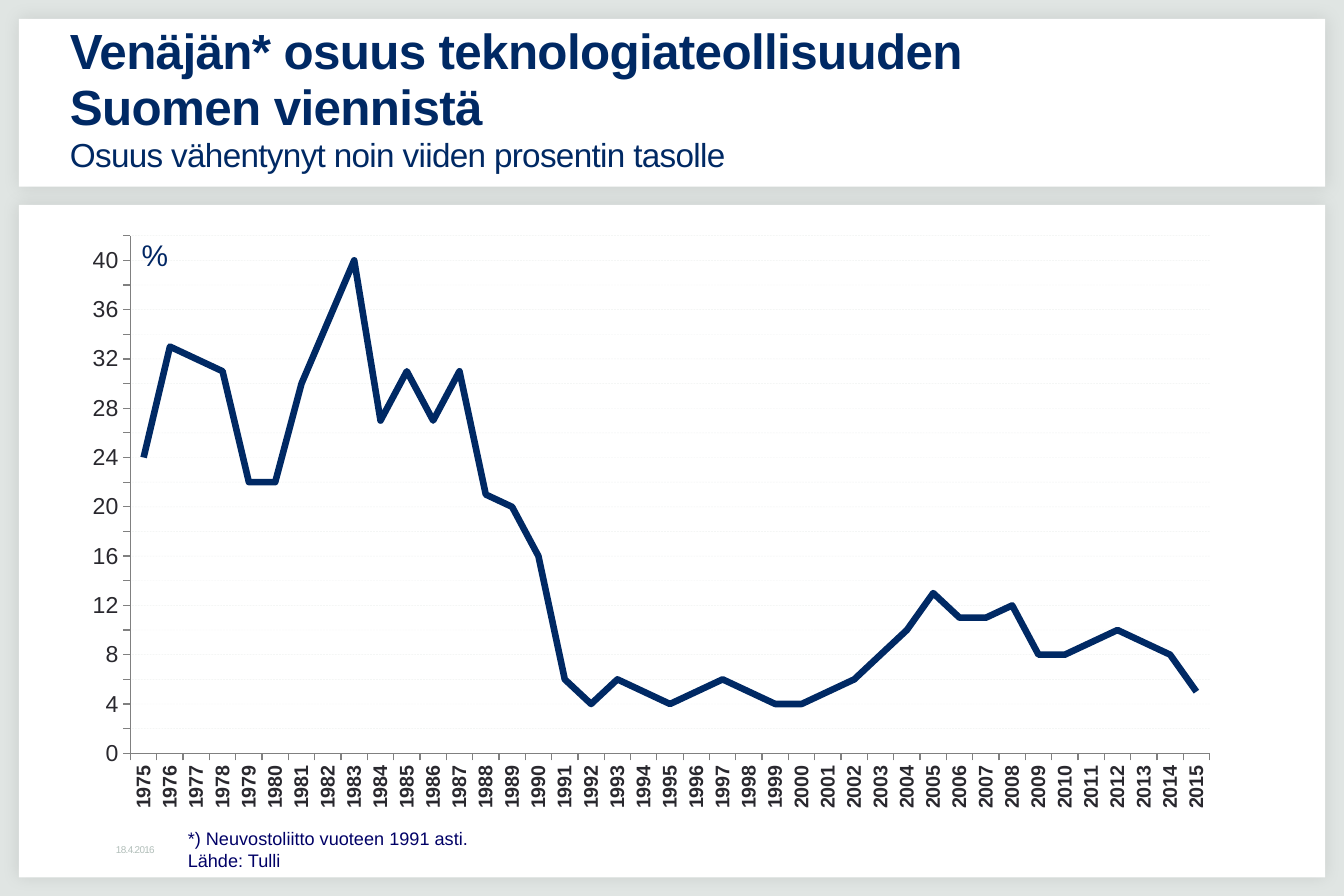
from lxml import etree
from pptx import Presentation
from pptx.chart.data import CategoryChartData
from pptx.dml.color import RGBColor
from pptx.enum.chart import XL_CHART_TYPE, XL_TICK_MARK
from pptx.enum.dml import MSO_LINE
from pptx.enum.shapes import MSO_SHAPE
from pptx.enum.text import MSO_ANCHOR, MSO_AUTO_SIZE, PP_ALIGN
from pptx.oxml import parse_xml
from pptx.oxml.ns import nsdecls, qn
from pptx.util import Pt

LINE_CHART = XL_CHART_TYPE.LINE
TICK_OUT, TICK_NONE = XL_TICK_MARK.OUTSIDE, XL_TICK_MARK.NONE
DASH = MSO_LINE.DASH
RECTANGLE = MSO_SHAPE.RECTANGLE
MIDDLE, TOP = MSO_ANCHOR.MIDDLE, MSO_ANCHOR.TOP
LEFT = PP_ALIGN.LEFT
NO_FIT = MSO_AUTO_SIZE.NONE
TITLE_ONLY = 5

NAVY, INK, GREY, AXIS_GREY = "002964", "29282E", "B1BEB9", "808080"

RUSSIA_SHARE = [
    24, 33, 32, 31, 22, 22, 30, 35, 40, 27, 31, 27, 31, 21, 20, 16, 6, 4, 6, 5, 4,
    5, 6, 5, 4, 4, 5, 6, 8, 10, 13, 11, 11, 12, 8, 8, 9, 10, 9, 8, 5]
FIRST_YEAR = 1975


def rgb(hex_colour):
    return RGBColor.from_string(hex_colour)


def set_spacing(run, points):
    """Set the letter spacing of a run."""
    run.font._element.set("spc", str(round(points * 100)))


class ShareSlide:
    font = "Arial"

    def __init__(self, presentation):
        self.slide = presentation.slides.add_slide(
            presentation.slide_layouts[TITLE_ONLY])
        self.shapes = self.slide.shapes
        self.slide.background.fill.solid()
        self.slide.background.fill.fore_color.rgb = rgb("E0E5E3")

    def style(self, font, size, colour, bold=False):
        font.name, font.bold = self.font, bold
        font.size = Pt(size)
        font.color.rgb = rgb(colour)

    def panel(self, left, top, width, height):
        """Add a white rectangle with a soft shadow on all sides."""
        panel = self.shapes.add_shape(
            RECTANGLE, Pt(left), Pt(top), Pt(width), Pt(height))
        panel.fill.solid()
        panel.fill.fore_color.rgb = rgb("FFFFFF")
        panel.line.fill.background()
        panel.shadow.inherit = False
        effects = panel._element.spPr.find(qn("a:effectLst"))
        effects.append(parse_xml(
            f'<a:outerShdw {nsdecls("a")} blurRad="{Pt(10)}" dist="0" dir="2700000">'
            '<a:srgbClr val="000000"><a:alpha val="10000"/></a:srgbClr>'
            '</a:outerShdw>'))

    def title(self, headline, subtitle, left, top, width, height):
        title = self.shapes.title
        title.left, title.top = Pt(left), Pt(top)
        title.width, title.height = Pt(width), Pt(height)
        self.shapes._spTree.append(title._element)  # in front of the panels
        frame = title.text_frame
        frame.vertical_anchor, frame.auto_size = MIDDLE, NO_FIT
        frame.margin_left = Pt(3)
        frame.word_wrap = True
        paragraph = frame.paragraphs[0]
        paragraph.alignment, paragraph.line_spacing = LEFT, 0.95
        paragraph.font.name = self.font
        paragraph.font.color.rgb = rgb(NAVY)
        for text, size, bold in ((headline, 30, True), (subtitle, 20.2, False)):
            if paragraph.runs:
                paragraph.add_line_break()
            run = paragraph.add_run()
            run.text = text
            run.font.size, run.font.bold = Pt(size), bold
            set_spacing(run, -0.4)

    def text(self, lines, left, top, width, height, size, colour,
             anchor=TOP, margin=None, spacing=0, wrap=True):
        box = self.shapes.add_textbox(Pt(left), Pt(top), Pt(width), Pt(height))
        frame = box.text_frame
        frame.word_wrap, frame.vertical_anchor = wrap, anchor
        if margin is not None:
            frame.margin_left = frame.margin_right = Pt(margin)
            frame.margin_top = frame.margin_bottom = Pt(margin)
        frame.text = "\n".join(lines)
        for paragraph in frame.paragraphs:
            self.style(paragraph.font, size, colour)
            if spacing:
                set_spacing(paragraph.runs[0], spacing)

    def line_chart(self, years, values, left, top, width, height):
        data = CategoryChartData()
        data.categories = years
        data.add_series("Series 1", values)
        chart = self.shapes.add_chart(
            LINE_CHART, Pt(left), Pt(top), Pt(width), Pt(height), data).chart
        chart.has_legend = chart.has_title = False
        self.style(chart.font, 18, INK)
        chart.plots[0].vary_by_categories = False
        share = chart.plots[0].series[0]
        share.smooth = False
        share.format.line.width = Pt(4)
        share.format.line.color.rgb = rgb(NAVY)

        year_axis, percent_axis = chart.category_axis, chart.value_axis
        for axis, size, bold in ((year_axis, 12, True), (percent_axis, 14, False)):
            self.style(axis.tick_labels.font, size, INK, bold)
            axis.major_tick_mark, axis.minor_tick_mark = TICK_OUT, TICK_NONE
            axis.format.line.width = Pt(0.75)
            axis.format.line.color.rgb = rgb(AXIS_GREY)
        year_axis.has_major_gridlines = False
        year_axis._element.txPr.bodyPr.set("rot", "-5400000")

        percent_axis.minimum_scale, percent_axis.maximum_scale = 0, 42
        percent_axis.major_unit = 2
        percent_axis.tick_labels.number_format = "0"
        percent_axis.tick_labels.number_format_is_linked = False
        grid = percent_axis.major_gridlines.format.line
        grid.width, grid.dash_style = Pt(0.25), DASH
        grid.color.rgb = rgb(GREY)
        grid_colour = percent_axis._element.find(
            qn("c:majorGridlines")).find(".//" + qn("a:srgbClr"))
        etree.SubElement(grid_colour, qn("a:alpha"), val="20000")
        self.place_plot(chart, x=0.05, y=0.02, w=0.93, h=0.87)

    def place_plot(self, chart, **fractions):
        """Fix the inner plot area, as fractions of the chart."""
        plot_area = chart._chartSpace.chart.plotArea
        for automatic in plot_area.findall(qn("c:layout")):
            plot_area.remove(automatic)
        layout = etree.Element(qn("c:layout"))
        manual = etree.SubElement(layout, qn("c:manualLayout"))
        settings = {"layoutTarget": "inner", "xMode": "edge", "yMode": "edge"}
        for name, value in {**settings, **fractions}.items():
            etree.SubElement(manual, qn("c:" + name), val=str(value))
        plot_area.insert(0, layout)


def main():
    presentation = Presentation()
    presentation.slide_width, presentation.slide_height = Pt(816.5), Pt(544.3)
    page = ShareSlide(presentation)
    for top, height in ((11.5, 102), (124.5, 408.5)):
        page.panel(11.5, top, 793.5, height)
    years = [str(FIRST_YEAR + i) for i in range(len(RUSSIA_SHARE))]
    page.line_chart(years, RUSSIA_SHARE, 44, 136, 705, 361.5)
    page.text(["18.4.2016"], 67.5, 510.5, 102, 11.5, 6, GREY,
              anchor=MIDDLE, margin=3, spacing=-0.4)
    page.title("Venäjän* osuus teknologiateollisuuden Suomen viennistä",
               "Osuus vähentynyt noin viiden prosentin tasolle",
               39.5, 21, 665.5, 79)
    page.text(["%"], 79, 140.5, 57, 29.5, 18.1, "002664")
    page.text(["*) Neuvostoliitto vuoteen 1991 asti.", "Lähde: Tulli"],
              107, 499, 186, 34, 11, "000066", wrap=False)
    presentation.save("out.pptx")


if __name__ == "__main__":
    main()
